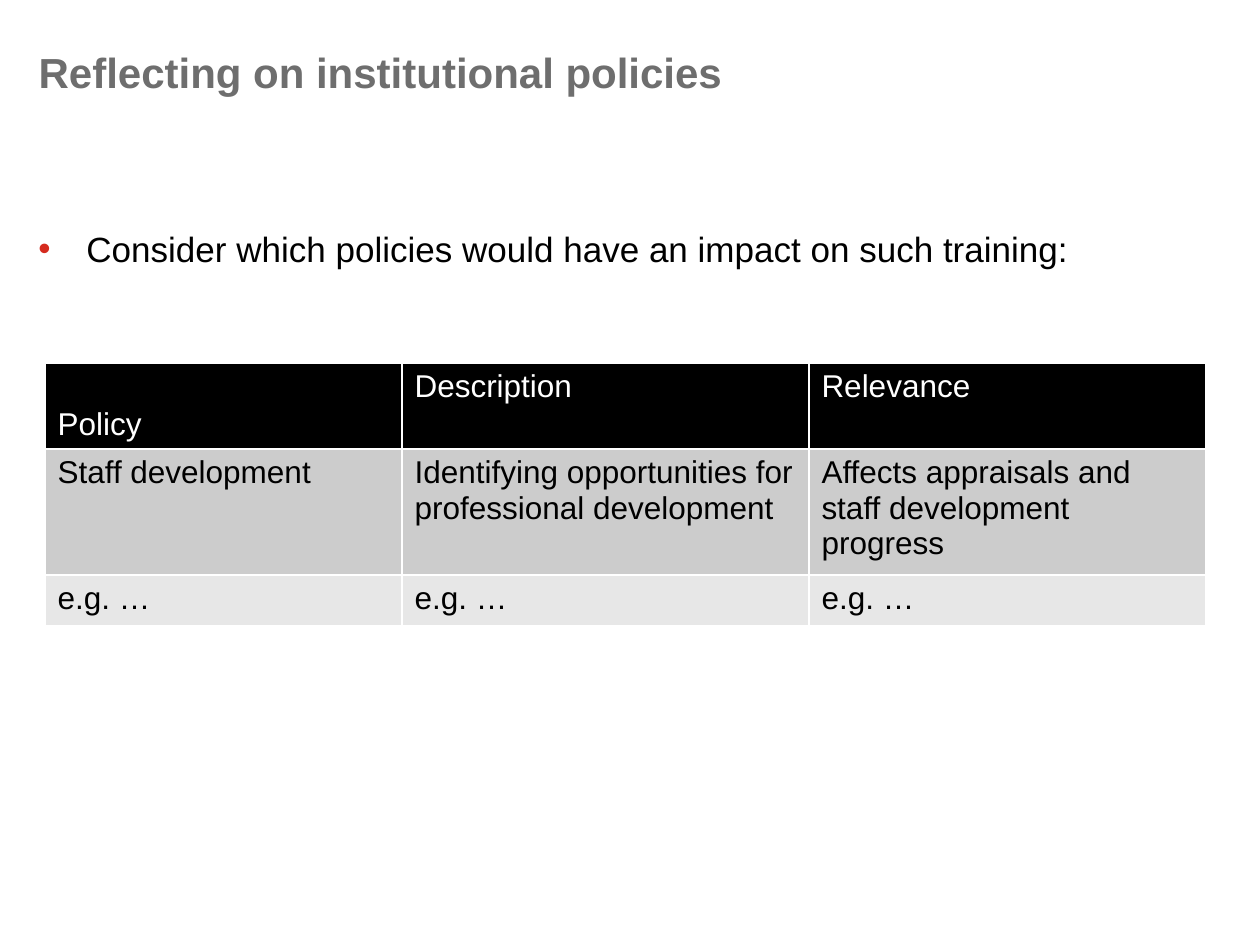
"""Build a slide on institutional policies with a bullet and a policy table."""
from lxml.etree import SubElement
from pptx import Presentation
from pptx.dml.color import RGBColor
from pptx.enum.text import MSO_ANCHOR, PP_ALIGN
from pptx.oxml import parse_xml
from pptx.oxml.ns import nsdecls, qn
from pptx.util import Pt

TITLE = "Reflecting on institutional policies"
BULLET = "Consider which policies would have an impact on such training:"
ROWS = [
    ("Policy", "Description", "Relevance"),
    ("Staff development",
     "Identifying opportunities for professional development",
     "Affects appraisals and staff development progress"),
    ("e.g. …", "e.g. …", "e.g. …"),
]
COLORS = {"title": "6E6E6E", "bullet": "D52B1E", "text": "000000", "white": "FFFFFF",
          "header": "000000", "dark band": "CCCCCC", "light band": "E7E7E7"}
BANDS = ["header", "dark band", "light band"]
COL_WIDTHS = [357, 407, 397]
ROW_HEIGHTS = [86, 119, 51]


def px(n):
    return round(n * 914400 / 126)


def write(tf, text, size=18, color="text", bold=False, anchor=MSO_ANCHOR.TOP, bullet=None):
    tf.word_wrap = True
    tf.vertical_anchor = anchor
    p = tf.paragraphs[0]
    p.alignment = PP_ALIGN.LEFT
    if bullet:
        pPr = p._p.get_or_add_pPr()
        pPr.set("marL", str(px(48)))
        pPr.set("indent", str(-px(48)))
        clr = SubElement(pPr, qn("a:buClr"))
        SubElement(clr, qn("a:srgbClr"), val=COLORS[bullet])
        SubElement(pPr, qn("a:buFont"), typeface="Arial")
        SubElement(pPr, qn("a:buChar"), char="•")
    r = p.add_run()
    r.text = text
    r.font.name = "Arial"
    r.font.size = Pt(size)
    r.font.bold = bold
    r.font.color.rgb = RGBColor.from_string(COLORS[color])


def add_borders(cell):
    tcPr = cell._tc.get_or_add_tcPr()
    for i, side in enumerate("LRTB"):
        tcPr.insert(i, parse_xml(
            f'<a:ln{side} {nsdecls("a")} w="{Pt(1)}"><a:solidFill>'
            f'<a:srgbClr val="{COLORS["white"]}"/></a:solidFill></a:ln{side}>'))


def add_policy_table(s):
    frame = s.shapes.add_table(len(ROWS), len(COL_WIDTHS), px(45), px(363),
                               px(sum(COL_WIDTHS)), px(sum(ROW_HEIGHTS)))
    table = frame.table
    for col, width in zip(table.columns, COL_WIDTHS):
        col.width = px(width)
    for i, (texts, band) in enumerate(zip(ROWS, BANDS)):
        table.rows[i].height = px(ROW_HEIGHTS[i])
        for j, text in enumerate(texts):
            cell = table.cell(i, j)
            cell.fill.solid()
            cell.fill.fore_color.rgb = RGBColor.from_string(COLORS[band])
            add_borders(cell)
            write(cell.text_frame, text, color="white" if i == 0 else "text")
            cell.vertical_anchor = MSO_ANCHOR.BOTTOM if i == j == 0 else MSO_ANCHOR.TOP


def main():
    prs = Presentation()
    prs.slide_width, prs.slide_height = px(1260), px(945)
    s = prs.slides.add_slide(prs.slide_layouts[5])
    title = s.shapes.title
    title.left, title.top, title.width, title.height = px(26), px(38), px(723), px(67)
    write(title.text_frame, TITLE, size=24, color="title", bold=True, anchor=MSO_ANCHOR.MIDDLE)
    body = s.shapes.add_textbox(px(26), px(221), px(1202), px(624))
    write(body.text_frame, BULLET, size=20, bullet="bullet")
    add_policy_table(s)
    prs.save("out.pptx")


if __name__ == "__main__":
    main()
